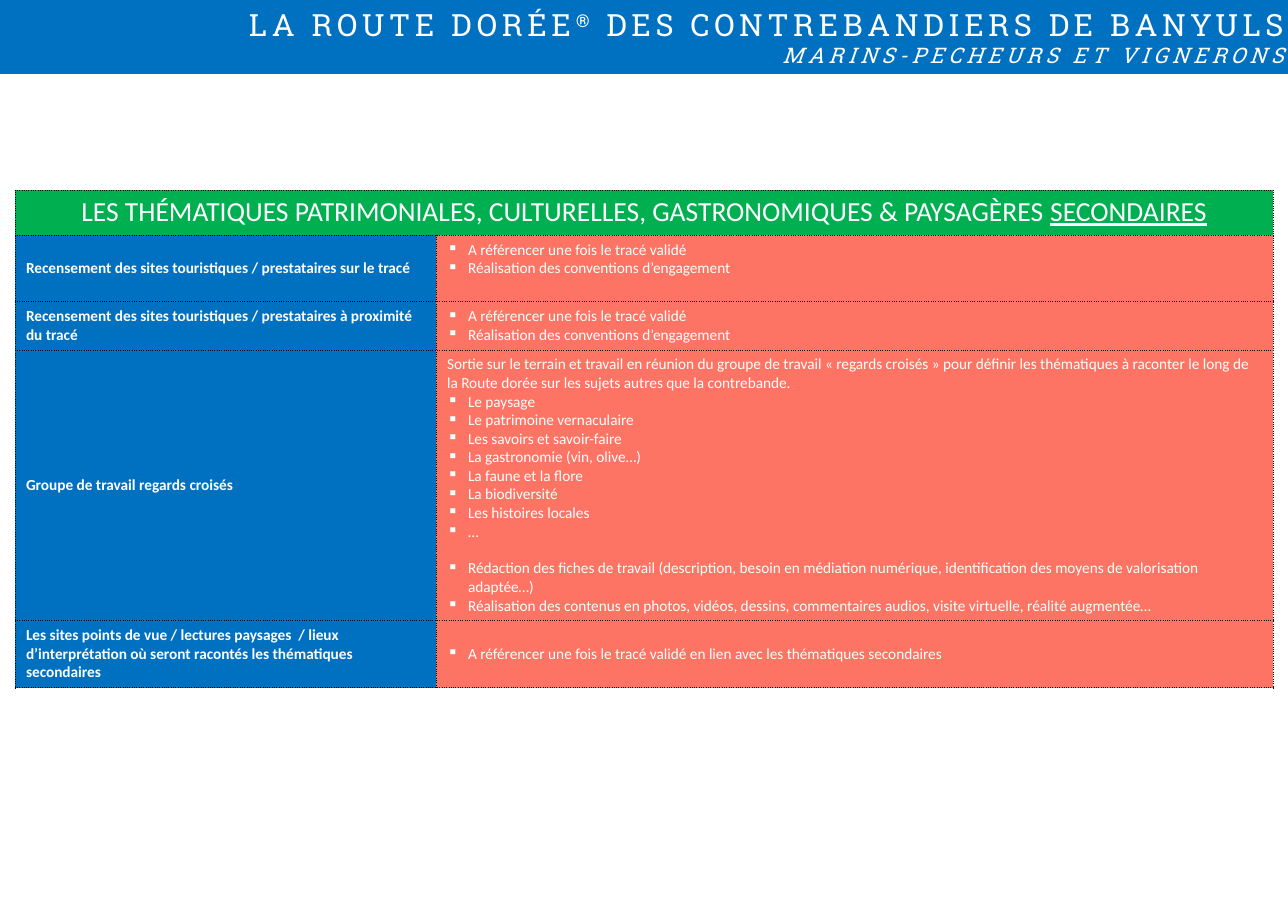
import pptx
import pptx.dml.color
import pptx.enum.shapes
import pptx.enum.text
import pptx.util
import lxml.etree
from pptx.oxml.ns import qn

PX = 8298
BLUE, GREEN, CORAL, WHITE, BLACK = "0070C0", "00B050", "FE7464", "FFFFFF", "000000"
ALIGN = pptx.enum.text.PP_ALIGN
MIDDLE = pptx.enum.text.MSO_ANCHOR.MIDDLE

HEADING = "LES THÉMATIQUES PATRIMONIALES, CULTURELLES, GASTRONOMIQUES & PAYSAGÈRES "
AGREEMENTS = ["A référencer une fois le tracé validé", "Réalisation des conventions d’engagement"]
FIELD_TRIP = (
    "Sortie sur le terrain et travail en réunion du groupe de travail « regards croisés » "
    "pour définir les thématiques à raconter le long de la Route dorée sur les sujets "
    "autres que la contrebande."
)
SUBJECTS = [
    "Le paysage", "Le patrimoine vernaculaire", "Les savoirs et savoir-faire",
    "La gastronomie (vin, olive…)", "La faune et la flore", "La biodiversité",
    "Les histoires locales", "…",
]
DELIVERABLES = [
    "Rédaction des fiches de travail (description, besoin en médiation numérique, "
    "identification des moyens de valorisation adaptée…)",
    "Réalisation des contenus en photos, vidéos, dessins, commentaires audios, "
    "visite virtuelle, réalité augmentée…",
]
THEMES = [
    ("Recensement des sites touristiques / prestataires sur le tracé", "", [AGREEMENTS]),
    ("Recensement des sites touristiques / prestataires à proximité du tracé", "", [AGREEMENTS]),
    ("Groupe de travail regards croisés", FIELD_TRIP, [SUBJECTS, DELIVERABLES]),
    ("Les sites points de vue / lectures paysages  / lieux d’interprétation où seront "
     "racontés les thématiques secondaires", "",
     [["A référencer une fois le tracé validé en lien avec les thématiques secondaires"]]),
]
COLUMN_WIDTHS = [421, 837]
ROW_HEIGHTS = [45, 66, 48, 268, 67]


def px(length):
    return pptx.util.Emu(length * PX)


def color(hex_string):
    return pptx.dml.color.RGBColor.from_string(hex_string)


def paint(fill, hex_string):
    fill.solid()
    fill.fore_color.rgb = color(hex_string)


def add_run(paragraph, text, size, font="Calibri", **styles):
    run = paragraph.add_run()
    run.text = text
    run.font.size = pptx.util.Pt(size)
    run.font.name = font
    run.font.color.rgb = color(WHITE)
    run.font.bold = styles.get("bold", False)
    run.font.italic = styles.get("italic", False)
    run.font.underline = styles.get("underline", False)
    return run


def add_title_run(paragraph, text, size, italic=False, baseline=0):
    run = add_run(paragraph, text, size, "Roboto Slab", italic=italic)
    properties = run._r.get_or_add_rPr()
    properties.set("spc", "300")
    if baseline:
        properties.set("baseline", str(baseline))


def next_paragraph(frame):
    first = frame.paragraphs[0]
    return first if not first.runs else frame.add_paragraph()


def add_bullet(frame, text, space_before):
    paragraph = next_paragraph(frame)
    paragraph.space_before = pptx.util.Pt(space_before)
    properties = paragraph._p.get_or_add_pPr()
    properties.set("marL", str(px(21)))
    properties.set("indent", str(-px(21)))
    lxml.etree.SubElement(properties, qn("a:buChar")).set("char", "▪")
    add_run(paragraph, text, 10)


def style_cell(cell, fill):
    properties = cell._tc.get_or_add_tcPr()
    for side in ("lnL", "lnR", "lnT", "lnB"):
        border = lxml.etree.SubElement(properties, qn(f"a:{side}"), w="6350")
        solid = lxml.etree.SubElement(border, qn("a:solidFill"))
        lxml.etree.SubElement(solid, qn("a:srgbClr")).set("val", BLACK)
        lxml.etree.SubElement(border, qn("a:prstDash")).set("val", "sysDot")
    paint(cell.fill, fill)
    cell.vertical_anchor = MIDDLE


def fill_details(cell, introduction, bullet_groups):
    frame = cell.text_frame
    if introduction:
        add_run(next_paragraph(frame), introduction, 10)
    for group_index, group in enumerate(bullet_groups):
        for index, text in enumerate(group):
            add_bullet(frame, text, 12 if group_index and not index else 0)


def add_banner(slide):
    banner = slide.shapes.add_shape(
        pptx.enum.shapes.MSO_SHAPE.RECTANGLE, 0, 0, px(1288), px(74))
    banner.shadow.inherit = False
    paint(banner.fill, BLUE)
    banner.line.fill.background()
    frame = banner.text_frame
    frame.word_wrap = True
    frame.vertical_anchor = MIDDLE
    frame.margin_right = px(4)
    route = frame.paragraphs[0]
    add_title_run(route, "LA ROUTE DORÉE", 20)
    add_title_run(route, "®", 20, baseline=30000)
    add_title_run(route, " DES CONTREBANDIERS DE BANYULS", 20)
    trades = frame.add_paragraph()
    add_title_run(trades, "MARINS-PECHEURS ET VIGNERONS", 14, italic=True)
    for paragraph in (route, trades):
        paragraph.alignment = ALIGN.RIGHT


def add_themes_table(slide):
    themes = slide.shapes.add_table(
        len(ROW_HEIGHTS), len(COLUMN_WIDTHS), px(15), px(190),
        px(sum(COLUMN_WIDTHS)), px(sum(ROW_HEIGHTS))).table
    themes.first_row = False
    themes.horz_banding = False
    for column, width in zip(themes.columns, COLUMN_WIDTHS):
        column.width = px(width)
    for row, height in zip(themes.rows, ROW_HEIGHTS):
        row.height = px(height)

    heading = themes.cell(0, 0)
    heading.merge(themes.cell(0, 1))
    for cell in themes.rows[0].cells:
        style_cell(cell, GREEN)
    title = heading.text_frame.paragraphs[0]
    title.alignment = ALIGN.CENTER
    add_run(title, HEADING, 18)
    add_run(title, "SECONDAIRES", 18, underline=True)

    for row, (theme, introduction, bullet_groups) in enumerate(THEMES, 1):
        label, details = themes.cell(row, 0), themes.cell(row, 1)
        style_cell(label, BLUE)
        style_cell(details, CORAL)
        add_run(label.text_frame.paragraphs[0], theme, 10, bold=True)
        fill_details(details, introduction, bullet_groups)
    themes.cell(1, 1).margin_bottom = px(24)


def main():
    presentation = pptx.Presentation()
    presentation.slide_width = px(1288)
    presentation.slide_height = px(911)
    slide = presentation.slides.add_slide(presentation.slide_layouts[6])
    add_themes_table(slide)
    add_banner(slide)
    presentation.save("out.pptx")


if __name__ == "__main__":
    main()
